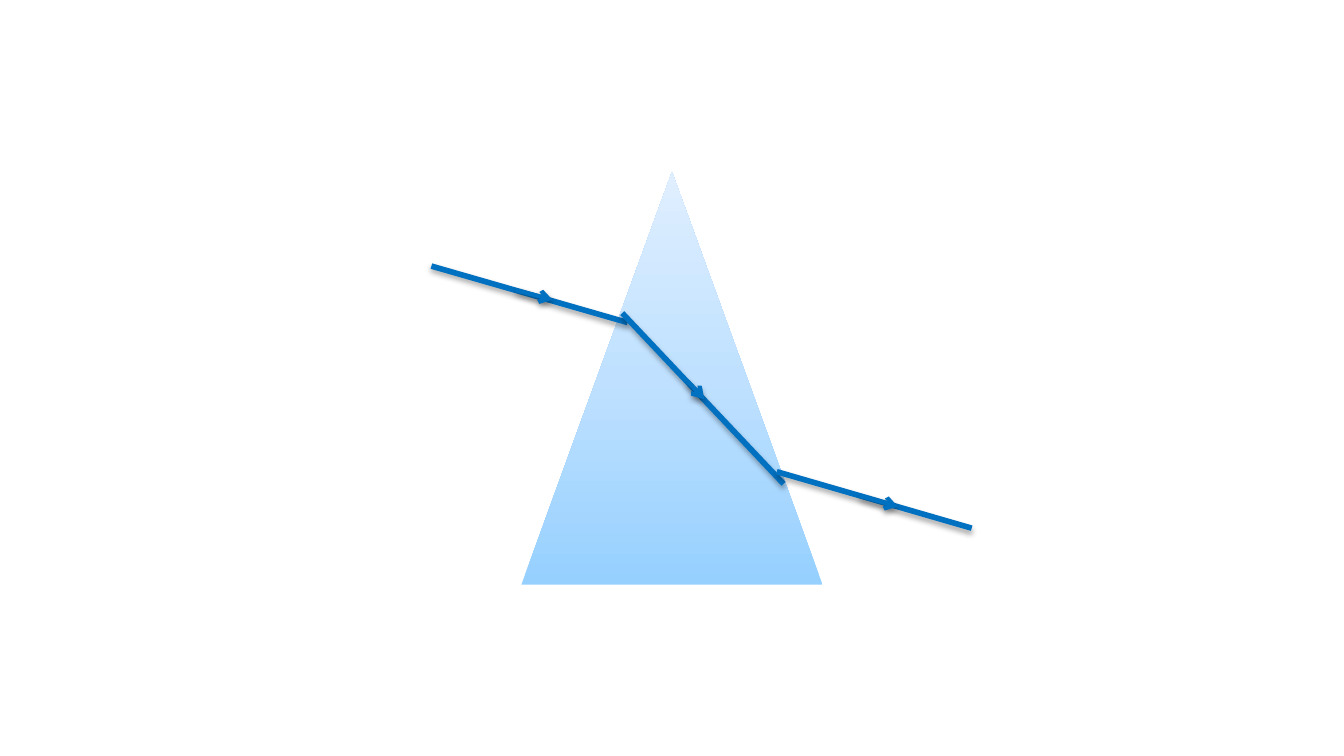
from copy import deepcopy

from lxml import etree
from pptx import Presentation
from pptx.dml.color import RGBColor
from pptx.enum.shapes import MSO_CONNECTOR, MSO_SHAPE
from pptx.oxml import parse_xml
from pptx.oxml.ns import nsdecls, qn
from pptx.util import Inches, Pt

STRAIGHT = MSO_CONNECTOR.STRAIGHT
TRIANGLE = MSO_SHAPE.ISOSCELES_TRIANGLE
BLANK_LAYOUT = 6
RAY_COLOR = "0070C0"
SHADOW_XML = (
    f'<a:effectLst {nsdecls("a")}>'
    f'<a:outerShdw blurRad="{Pt(3.1)}" dist="{Pt(1.8)}" dir="5400000" rotWithShape="0">'
    '<a:srgbClr val="000000"><a:alpha val="35000"/></a:srgbClr>'
    '</a:outerShdw></a:effectLst>'
)


def color(hex_value):
    return RGBColor.from_string(hex_value)


def add_ray_line(group, start, end, width):
    line = group.shapes.add_connector(STRAIGHT, *[Inches(value) for value in start + end])
    line.line.color.rgb = color(RAY_COLOR)
    line.line.width = Pt(width)
    line._element.spPr.append(parse_xml(SHADOW_XML))
    return line


# Widescreen page, 16:9
deck = Presentation()
deck.slide_width = Inches(10)
deck.slide_height = Inches(10 * 9 / 16)
page = deck.slides.add_slide(deck.slide_layouts[BLANK_LAYOUT])

# Prism, shaded from its base up to its tip
prism = page.shapes.add_shape(TRIANGLE, Inches(3.88), Inches(1.28), Inches(2.24), Inches(3.07))
prism.shadow.inherit = False
prism.line.fill.background()
prism.fill.gradient()
prism.fill.gradient_angle = 90
stop_list = prism._element.spPr.find(".//" + qn("a:gsLst"))
stop_list.insert(1, deepcopy(stop_list[0]))
shades = [(0, "96D0FF"), (0.5, "BFE1FF"), (1, "E0EFFF")]
for stop, (position, shade) in zip(prism.fill.gradient_stops, shades):
    stop.position = position
    stop.color.rgb = color(shade)

# Light rays: whole segment, then the short piece that carries the arrowhead
rays = [
    ((3.21, 1.98), (4.67, 2.4), (3.84, 2.16), (4.11, 2.23)),
    ((4.63, 2.33), (5.83, 3.6), (5.12, 2.84), (5.24, 2.97)),
    ((5.78, 3.51), (7.23, 3.93), (6.4, 3.69), (6.68, 3.77)),
]
for start, end, arrow_start, arrow_end in rays:
    ray = page.shapes.add_group_shape()
    add_ray_line(ray, start, end, 3)
    arrow = add_ray_line(ray, arrow_start, arrow_end, 2.25)
    outline = arrow._element.spPr.find(qn("a:ln"))
    etree.SubElement(outline, qn("a:tailEnd"), type="arrow")

deck.save("out.pptx")
